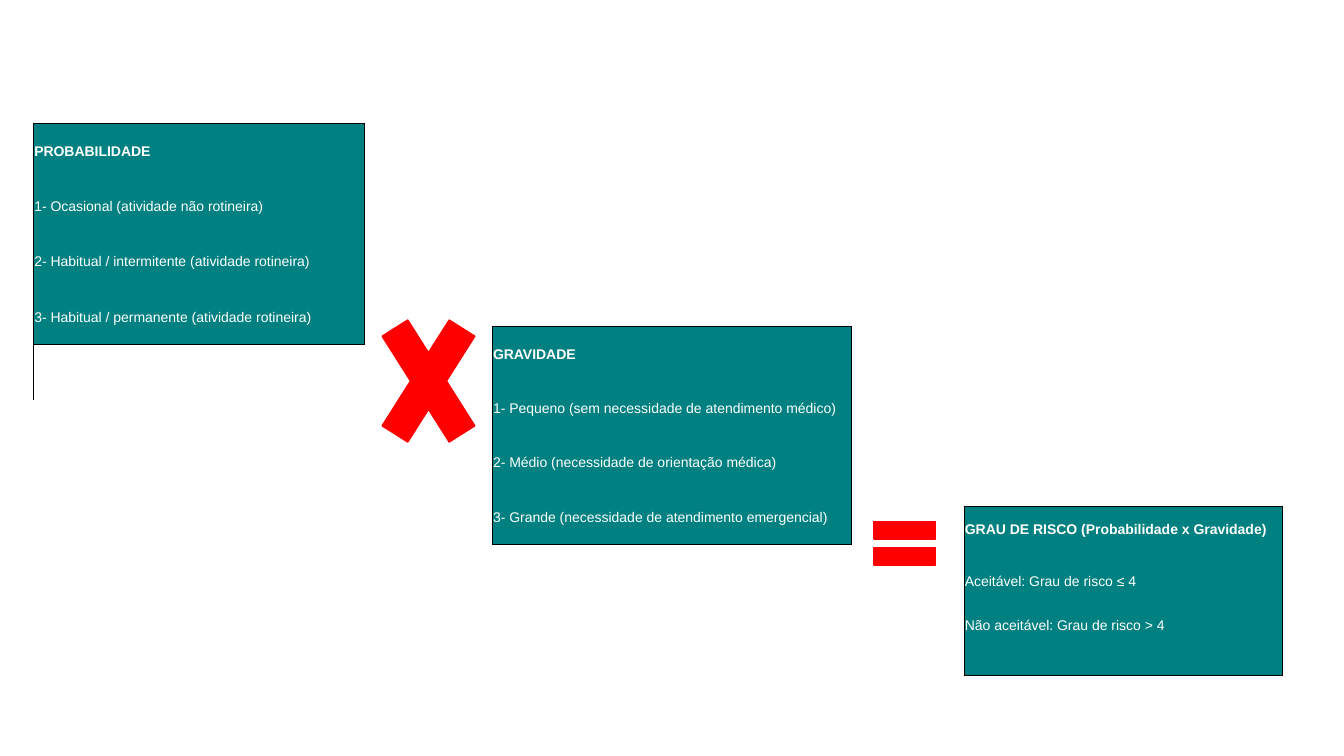
from lxml import etree
from pptx import Presentation
from pptx.dml.color import RGBColor
from pptx.enum.shapes import MSO_SHAPE
from pptx.enum.text import MSO_ANCHOR
from pptx.oxml.ns import qn
from pptx.util import Inches, Pt

TIMES, EQUALS = MSO_SHAPE.MATH_MULTIPLY, MSO_SHAPE.MATH_EQUAL
MIDDLE = MSO_ANCHOR.MIDDLE
TEAL = RGBColor(0x00, 0x80, 0x80)
RED = RGBColor(0xFF, 0x00, 0x00)
WHITE = RGBColor(0xFF, 0xFF, 0xFF)
BLACK = RGBColor(0x00, 0x00, 0x00)


def write(tf, text, size=10, bold=False, color=WHITE, font="Arial"):
    r = tf.paragraphs[0].add_run()
    r.text = text
    r.font.size, r.font.bold, r.font.name = Pt(size), bold, font
    r.font.color.rgb = color


def set_borders(cell, **widths):
    """Draw the edges given as L, R, T, B in points; 0 hides an edge."""
    tc_pr = cell._tc.get_or_add_tcPr()
    for edge in "LRTB":
        width = widths[edge]
        ln = etree.SubElement(tc_pr, qn(f"a:ln{edge}"), w=str(int(Pt(width))))
        if width:
            fill = etree.SubElement(ln, qn("a:solidFill"))
            etree.SubElement(fill, qn("a:srgbClr"), val=str(BLACK))
        else:
            etree.SubElement(ln, qn("a:noFill"))


def add_criteria(s, left, top, cols, rows, lines, spans, filled, tail_edge=0):
    """Place a table whose first `filled` rows form one outlined teal panel.

    spans holds the merged columns of each text row; tail_edge is the
    width of the left edge of any row below the panel.
    """
    frame = s.shapes.add_table(len(rows), len(cols), Inches(left), Inches(top),
                               Inches(sum(cols)), Inches(sum(rows)))
    table = frame.table
    table.first_row = table.horz_banding = False
    for col, width in zip(table.columns, cols):
        col.width = Inches(width)
    for row, height in zip(table.rows, rows):
        row.height = Inches(height)

    for i in range(len(rows)):
        for j in range(len(cols)):
            cell = table.cell(i, j)
            span = spans[i] if i < len(lines) and j == 0 else 1
            panel = i < filled
            set_borders(cell,
                        L=(0.5 if panel else tail_edge) if j == 0 else 0,
                        R=0.5 if panel and j + span == len(cols) else 0,
                        T=0.5 if i in (0, filled) else 0,
                        B=0.5 if i == filled - 1 else 0)
            cell.margin_left = cell.margin_right = cell.margin_top = Inches(0.01)
            cell.margin_bottom = 0
            cell.vertical_anchor = MIDDLE
            if panel:
                cell.fill.solid()
                cell.fill.fore_color.rgb = TEAL
            else:
                cell.fill.background()

    for i, text in enumerate(lines):
        cell = table.cell(i, 0)
        if spans[i] > 1:
            cell.merge(table.cell(i, spans[i] - 1))
        write(cell.text_frame, text, bold=i == 0)


def add_operator(s, kind, left, top, width, height):
    sp = s.shapes.add_shape(kind, Inches(left), Inches(top),
                            Inches(width), Inches(height))
    sp.shadow.inherit = False
    sp.fill.solid()
    sp.fill.fore_color.rgb = RED
    sp.line.color.rgb = RED
    sp.line.width = Pt(1)


def build_risk_slide(prs):
    s = prs.slides.add_slide(prs.slide_layouts[6])
    add_criteria(s, 0.33, 1.22, [0.54, 2.64, 0.1], [0.55] * 5, [
        "PROBABILIDADE",
        "1- Ocasional (atividade não rotineira)",
        "2- Habitual / intermitente (atividade rotineira)",
        "3- Habitual / permanente (atividade rotineira)",
    ], spans=[2] * 4, filled=4, tail_edge=1)
    add_criteria(s, 4.88, 3.24, [3.56], [0.54] * 5, [
        "GRAVIDADE",
        "1- Pequeno (sem necessidade de atendimento médico)",
        "2- Médio (necessidade de orientação médica)",
        "3- Grande (necessidade de atendimento emergencial)",
    ], spans=[1] * 4, filled=4)
    add_operator(s, TIMES, 3.61, 2.77, 1.28, 2.02)
    add_operator(s, EQUALS, 8.56, 5.02, 0.83, 0.74)
    add_criteria(s, 9.56, 5.02, [0.43, 1.84, 0.09, 0.21, 0.59],
                 [0.47, 0.55, 0.33, 0.33], [
        "GRAU DE RISCO (Probabilidade x Gravidade)",
        "Aceitável: Grau de risco ≤ 4",
        "Não aceitável: Grau de risco > 4",
    ], spans=[5, 2, 2], filled=4)


def main():
    prs = Presentation()
    prs.slide_width, prs.slide_height = Inches(13.33), Inches(7.5)
    build_risk_slide(prs)
    prs.save("out.pptx")


if __name__ == "__main__":
    main()
